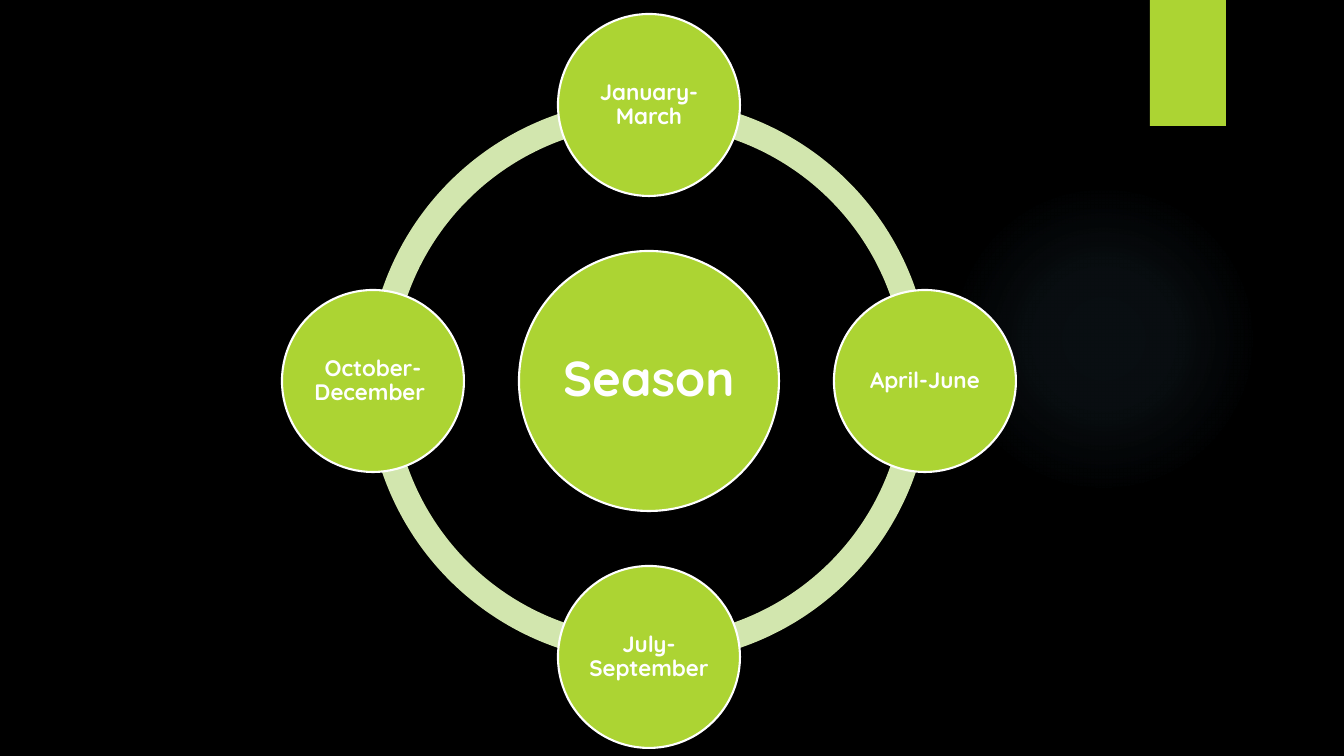
from dataclasses import dataclass
from math import cos, radians, sin

from pptx import Presentation, oxml, util as u
from pptx.dml.color import RGBColor
from pptx.enum import shapes, text
from pptx.oxml import ns

EMU_PER_PX = 914400 / 100.8


@dataclass(frozen=True)
class Theme:
    background: str = "000000"
    accent: str = "ACD433"
    ring: str = "D2E6AE"
    light: str = "FFFFFF"
    glow: str = "7AC4F0"
    font: str = "Quicksand"
    hub_size: int = 35
    season_size: int = 16


@dataclass(frozen=True)
class Disc:
    label: str
    center_x: int
    center_y: int
    diameter: int
    size: int
    inset: int


THEME = Theme()
CENTER_X, CENTER_Y = 649, 381
ORBIT, RING_DIAMETER, RING_THICKNESS = 276, 564, 0.046
SEASONS = ("January-March", "April-June", "July-September", "October-December ")
GLOW_STOPS = ((0, 7), (36, 6), (69, 0))  # position and opacity, percent


def px(length: int) -> u.Emu:
    return u.Emu(round(length * EMU_PER_PX))


def add_plain(slide, kind, left: int, top: int, width: int, height: int, color: str):
    """Add a flat shape without outline or shadow."""
    shape = slide.shapes.add_shape(kind, px(left), px(top), px(width), px(height))
    shape.shadow.inherit = False
    shape.fill.solid()
    shape.fill.fore_color.rgb = RGBColor.from_string(color)
    shape.line.fill.background()
    return shape


def add_centered(slide, kind, center_x: int, center_y: int, diameter: int, color: str):
    left, top = center_x - diameter // 2, center_y - diameter // 2
    return add_plain(slide, kind, left, top, diameter, diameter, color)


def add_glow(slide) -> None:
    shape = add_plain(slide, shapes.MSO_SHAPE.OVAL, 949, 184, 310, 310, THEME.glow)
    stops = "".join(
        f'<a:gs pos="{position * 1000}"><a:srgbClr val="{THEME.glow}">'
        f'<a:alpha val="{opacity * 1000}"/></a:srgbClr></a:gs>'
        for position, opacity in GLOW_STOPS
    )
    gradient = oxml.parse_xml(
        f'<a:gradFill {ns.nsdecls("a")}><a:gsLst>{stops}</a:gsLst><a:path path="circle">'
        '<a:fillToRect l="50000" t="50000" r="50000" b="50000"/></a:path></a:gradFill>'
    )
    properties = shape.element.spPr
    properties.replace(properties.find(ns.qn("a:solidFill")), gradient)


def add_ring(slide) -> None:
    quarter = 54  # 90 degrees in adjustment units
    for index in range(4):
        arc = add_centered(slide, shapes.MSO_SHAPE.BLOCK_ARC, CENTER_X, CENTER_Y,
                           RING_DIAMETER, THEME.ring)
        arc.adjustments[0] = index * quarter
        arc.adjustments[1] = (index + 1) % 4 * quarter
        arc.adjustments[2] = RING_THICKNESS


def add_disc(slide, disc: Disc) -> None:
    shape = add_centered(slide, shapes.MSO_SHAPE.OVAL, disc.center_x, disc.center_y,
                         disc.diameter, THEME.accent)
    shape.line.color.rgb = RGBColor.from_string(THEME.light)
    shape.line.width = u.Pt(1.5)
    frame = shape.text_frame
    frame_format = {"word_wrap": True, "vertical_anchor": text.MSO_ANCHOR.MIDDLE}
    for side in ("left", "right", "top", "bottom"):
        frame_format[f"margin_{side}"] = px(disc.inset)
    for name, value in frame_format.items():
        setattr(frame, name, value)
    paragraph = frame.paragraphs[0]
    paragraph.alignment = text.PP_ALIGN.CENTER
    paragraph.line_spacing = 0.9
    run = paragraph.add_run()
    run.text = disc.label
    font_format = {"name": THEME.font, "size": u.Pt(disc.size), "bold": True}
    for name, value in font_format.items():
        setattr(run.font, name, value)
    run.font.color.rgb = RGBColor.from_string(THEME.light)


def main() -> None:
    presentation = Presentation()
    presentation.slide_width, presentation.slide_height = px(1344), px(756)
    slide = presentation.slides.add_slide(presentation.slide_layouts[6])
    slide.background.fill.solid()
    slide.background.fill.fore_color.rgb = RGBColor.from_string(THEME.background)

    # Backdrop: soft glow and corner tab
    add_glow(slide)
    add_plain(slide, shapes.MSO_SHAPE.RECTANGLE, 1150, 0, 76, 126, THEME.accent)

    # Cycle: ring, hub, then the seasons clockwise from the top
    add_ring(slide)
    add_disc(slide, Disc("Season", CENTER_X, CENTER_Y, 260, THEME.hub_size, 5))
    for index, label in enumerate(SEASONS):
        angle = radians(index * 90 - 90)
        add_disc(slide, Disc(label, CENTER_X + round(ORBIT * cos(angle)),
                             CENTER_Y + round(ORBIT * sin(angle)), 182,
                             THEME.season_size, 2))

    presentation.save("out.pptx")


if __name__ == "__main__":
    main()
